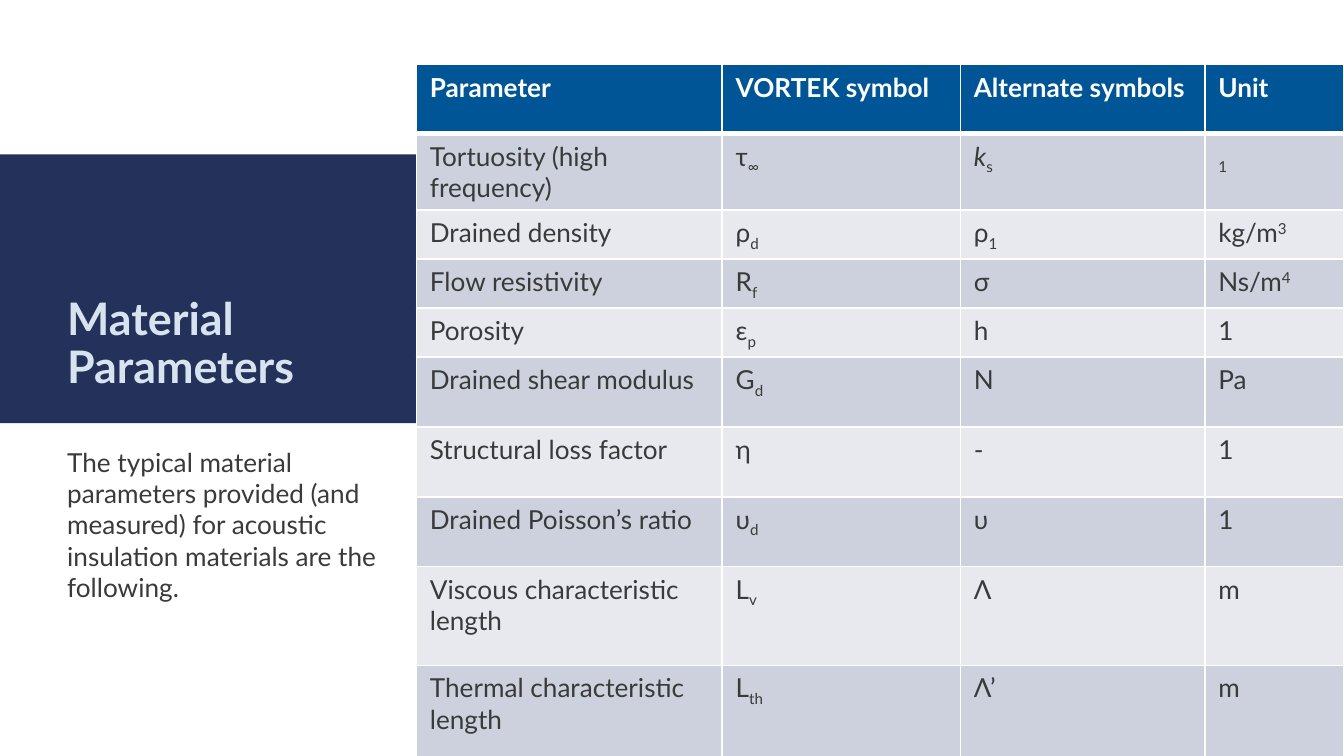
from lxml import etree
from pptx import Presentation
from pptx.dml.color import RGBColor
from pptx.enum.shapes import MSO_SHAPE
from pptx.enum.text import MSO_ANCHOR, MSO_AUTO_SIZE, PP_ALIGN
from pptx.oxml.ns import qn
from pptx.util import Cm, Pt

RECT = MSO_SHAPE.RECTANGLE
TOP, BOTTOM = MSO_ANCHOR.TOP, MSO_ANCHOR.BOTTOM
LEFT = PP_ALIGN.LEFT
NO_FIT = MSO_AUTO_SIZE.NONE
TITLE_ONLY = 5

NAVY = RGBColor(0x24, 0x32, 0x5B)
BLUE = RGBColor(0x00, 0x55, 0x96)
PALE = RGBColor(0xD7, 0xE3, 0xEE)
INK = RGBColor(0x39, 0x3A, 0x39)
WHITE = RGBColor(0xFF, 0xFF, 0xFF)
ROW_FILLS = (RGBColor(0xE7, 0xE9, 0xEF), RGBColor(0xCC, 0xD1, 0xDD))

TITLE_FONT = {"name": "Lato", "size": Pt(24), "bold": True}
HEAD_FONT = {"name": "Lato", "size": Pt(14), "bold": True}
BODY_FONT = {"name": "Lato", "size": Pt(14), "bold": False}

COL_WIDTHS = (5.78, 4.5, 4.62, 2.63)
ROW_HEIGHTS = (1.31, 1.43) + (0.84,) * 3 + (1.32,) * 3 + (1.87,) * 2
BASELINES = {"_": "-25000", "^": "30000"}
# "_" starts a subscript and "^" a superscript
ROWS = (
    ("Parameter", "VORTEK symbol", "Alternate symbols", "Unit"),
    ("Tortuosity (high frequency)", "τ_∞", "k_s", "_1"),
    ("Drained density", "ρ_d", "ρ_1", "kg/m^3"),
    ("Flow resistivity", "R_f", "σ", "Ns/m^4"),
    ("Porosity", "ε_p", "h", "1"),
    ("Drained shear modulus", "G_d", "N", "Pa"),
    ("Structural loss factor", "η", "-", "1"),
    ("Drained Poisson’s ratio", "υ_d", "υ", "1"),
    ("Viscous characteristic length", "L_v", "Λ", "m"),
    ("Thermal characteristic length", "L_th", "Λ’", "m"),
)


def add_run(p, text, font, color):
    r = p.add_run()
    r.text = text
    for name, value in font.items():
        setattr(r.font, name, value)
    r.font.color.rgb = color
    return r


def set_frame(tf, anchor, insets):
    tf.word_wrap = True
    tf.auto_size = NO_FIT
    tf.vertical_anchor = anchor
    sides = ("left", "top", "right", "bottom")
    for side, inset in zip(sides, insets):
        setattr(tf, f"margin_{side}", Cm(inset))


def add_band(s, x, y, w, h):
    sp = s.shapes.add_shape(RECT, Cm(x), Cm(y), Cm(w), Cm(h))
    sp.shadow.inherit = False
    sp.fill.solid()
    sp.fill.fore_color.rgb = NAVY
    sp.line.fill.background()


def place_title(s, x, y, w, h):
    """Put the title placeholder in its box, in front of the band."""
    sp = s.shapes.title
    sp.left, sp.top, sp.width, sp.height = Cm(x), Cm(y), Cm(w), Cm(h)
    sp.element.getparent().append(sp.element)
    set_frame(sp.text_frame, BOTTOM, (0, 0.13, 0.25, 0.13))
    p = sp.text_frame.paragraphs[0]
    p.alignment = LEFT
    p.line_spacing = 0.9
    add_run(p, "Material Parameters", TITLE_FONT, PALE)


def add_intro(s, x, y, w, h):
    tf = s.shapes.add_textbox(Cm(x), Cm(y), Cm(w), Cm(h)).text_frame
    set_frame(tf, TOP, (0, 0, 0.25, 0.13))
    add_run(tf.paragraphs[0],
            "The typical material parameters provided (and measured) "
            "for acoustic insulation materials are the following.",
            BODY_FONT, INK)


def add_symbol(p, text, font, color):
    """Write text whose part after a mark is raised or lowered."""
    mark = next((m for m in BASELINES if m in text), None)
    base, _, script = text.partition(mark) if mark else (text, "", "")
    if base:
        r = add_run(p, base, font, color)
        if base == "k":
            r.font.italic = True
    if script:
        r = add_run(p, script, font, color)
        r.font._element.set("baseline", BASELINES[mark])


def set_borders(cell, top, bottom):
    tcPr = cell._tc.get_or_add_tcPr()
    for tag, width in (("lnL", 1), ("lnR", 1), ("lnT", top), ("lnB", bottom)):
        ln = etree.SubElement(tcPr, qn(f"a:{tag}"), w=str(Pt(width)))
        fill = etree.SubElement(ln, qn("a:solidFill"))
        etree.SubElement(fill, qn("a:srgbClr"), val=str(WHITE))


def add_parameter_table(s, x, y):
    tbl = s.shapes.add_table(
        len(ROWS), len(COL_WIDTHS), Cm(x), Cm(y),
        Cm(sum(COL_WIDTHS)), Cm(sum(ROW_HEIGHTS))).table
    for col, width in zip(tbl.columns, COL_WIDTHS):
        col.width = Cm(width)
    for i, (row, height, texts) in enumerate(zip(tbl.rows, ROW_HEIGHTS, ROWS)):
        row.height = Cm(height)
        head = i == 0
        font, color = (HEAD_FONT, WHITE) if head else (BODY_FONT, INK)
        for cell, text in zip(row.cells, texts):
            set_borders(cell, 3 if i == 1 else 1, 3 if head else 1)
            cell.fill.solid()
            cell.fill.fore_color.rgb = BLUE if head else ROW_FILLS[i % 2]
            add_symbol(cell.text_frame.paragraphs[0], text, font, color)


def main():
    prs = Presentation()
    prs.slide_width, prs.slide_height = Cm(25.4), Cm(14.29)
    s = prs.slides.add_slide(prs.slide_layouts[TITLE_ONLY])
    add_band(s, 0, 2.92, 10.36, 5.08)
    add_intro(s, 1.27, 8.43, 6.1, 4.65)
    add_parameter_table(s, 7.87, 1.22)
    place_title(s, 1.27, 3.33, 6.1, 4.24)
    prs.save("out.pptx")


if __name__ == "__main__":
    main()
